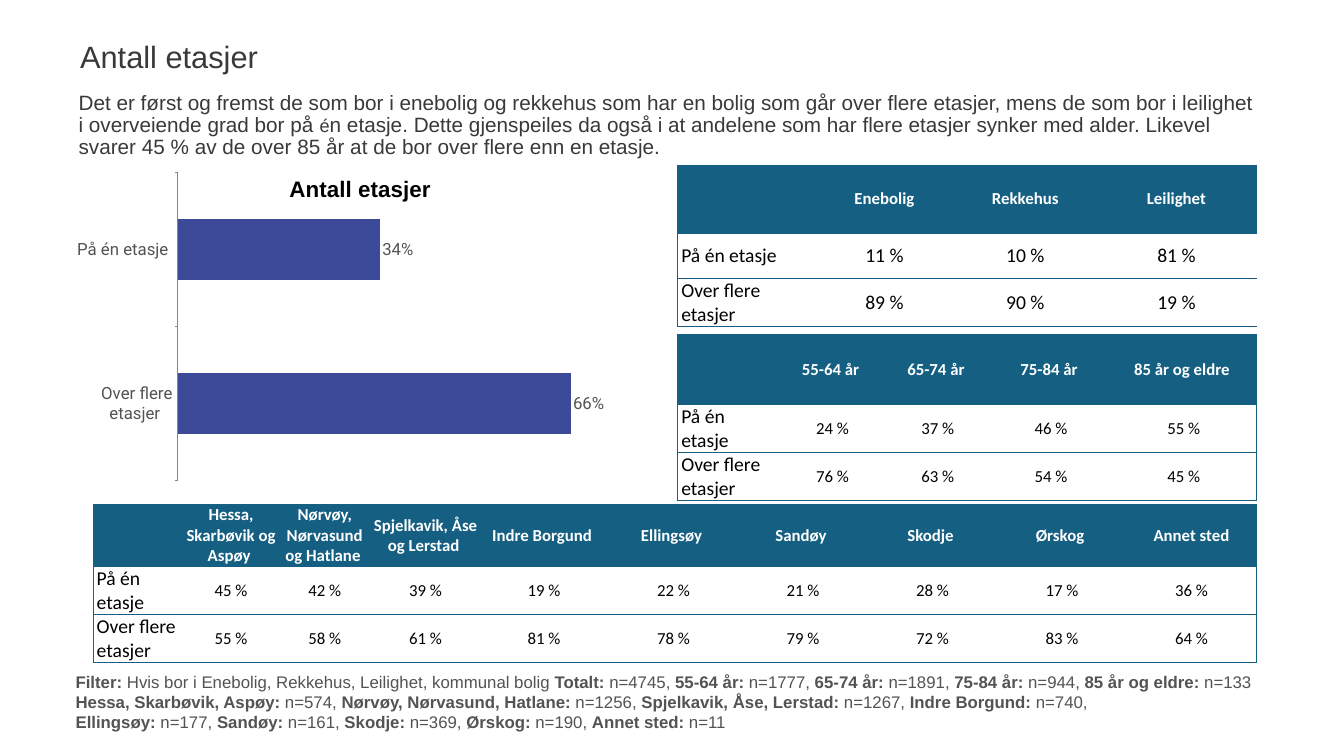
from lxml.etree import SubElement
from pptx import Presentation
from pptx.chart.data import CategoryChartData
from pptx.dml.color import RGBColor
from pptx.enum.chart import XL_CHART_TYPE, XL_LABEL_POSITION, XL_TICK_LABEL_POSITION, XL_TICK_MARK
from pptx.enum.text import MSO_ANCHOR, PP_ALIGN
from pptx.oxml import parse_xml
from pptx.oxml.ns import nsdecls, qn
from pptx.util import Inches, Pt

COLORS = {"teal": "156082", "bar": "3D4A9A", "heading": "3B3838", "grey": "535353",
          "axis": "868686", "black": "000000", "white": "FFFFFF"}


def format_font(font, color, **values):
    for name, value in values.items():
        setattr(font, name, value)
    font.color.rgb = RGBColor.from_string(COLORS[color])


def set_borders(cell, visible_sides):
    properties = cell._tc.get_or_add_tcPr()
    for side in "LRTB":
        line = SubElement(properties, qn(f"a:ln{side}"), w=str(Pt(1)))
        if side in visible_sides:
            fill = SubElement(line, qn("a:solidFill"))
            SubElement(fill, qn("a:srgbClr"), val=COLORS["teal"])
        else:
            SubElement(line, qn("a:noFill"))


presentation = Presentation()
presentation.slide_width = Inches(26.67)
presentation.slide_height = Inches(15)
slide = presentation.slides.add_slide(presentation.slide_layouts[6])

chart_data = CategoryChartData(number_format="0%")
chart_data.categories = ["På én etasje ", "Over flere etasjer "]
chart_data.add_series("Antall etasjer", [0.34, 0.66])
chart = slide.shapes.add_chart(XL_CHART_TYPE.BAR_CLUSTERED, Inches(1.53), Inches(3.18),
                               Inches(11.23), Inches(7.38), chart_data).chart
format_font(chart.font, "black", size=Pt(10), name="Arial")
chart.has_legend = False
chart.has_title = True
chart.chart_title.include_in_layout = True
chart.chart_title.text_frame.text = "Antall etasjer"
format_font(chart.chart_title.text_frame.paragraphs[0].runs[0].font, "black",
            size=Pt(32), name="Arial", bold=True)

category_axis = chart.category_axis
category_axis.reverse_order = True
category_axis.major_tick_mark = XL_TICK_MARK.OUTSIDE
category_axis.tick_label_position = XL_TICK_LABEL_POSITION.LOW
category_axis.format.line.color.rgb = RGBColor.from_string(COLORS["axis"])
format_font(category_axis.tick_labels.font, "grey", size=Pt(24), name="Roboto")
value_axis = chart.value_axis
value_axis.visible = False
value_axis.has_major_gridlines = False
value_axis.minimum_scale = 0
value_axis.maximum_scale = 0.7

plot = chart.plots[0]
plot.gap_width = 150
plot.overlap = -20
plot.vary_by_categories = False
series = plot.series[0]
series.format.fill.solid()
series.format.fill.fore_color.rgb = RGBColor.from_string(COLORS["bar"])
labels = series.data_labels
labels.show_value = True
labels.number_format = "0%"
labels.number_format_is_linked = False
labels.position = XL_LABEL_POSITION.OUTSIDE_END
format_font(labels.font, "grey", size=Pt(24), name="Roboto")

plot_area = chart._chartSpace.chart.plotArea
for layout in plot_area.findall(qn("c:layout")):
    plot_area.remove(layout)
plot_area.insert(0, parse_xml(
    f'<c:layout {nsdecls("c")}><c:manualLayout><c:layoutTarget val="inner"/>'
    '<c:xMode val="edge"/><c:yMode val="edge"/><c:x val="0.177"/><c:y val="0.033"/>'
    '<c:w val="0.738"/><c:h val="0.828"/></c:manualLayout></c:layout>'))

tables = [
    {"left": 13.45, "top": 3.27, "columns": [2.71, 2.78, 2.81, 3.19], "rows": [1.35, 0.91, 0.91],
     "headers": ["Enebolig", "Rekkehus", "Leilighet"],
     "values": [[11, 10, 81], [89, 90, 19]],
     "size": 28, "margins": (0.07, 0), "right_border": ""},
    {"left": 13.45, "top": 6.64, "columns": [2.03, 2.08, 2.1, 2.39, 2.88], "rows": [1.39, 0.77, 0.93],
     "headers": ["55-64 år ", "65-74 år ", "75-84 år ", "85 år og eldre "],
     "values": [[24, 37, 46, 55], [76, 63, 54, 45]],
     "size": 24, "margins": (0.01, 0.01), "right_border": "R"},
    {"left": 1.85, "top": 10.01, "columns": [1.81, 1.85, 1.87, 2.13] + [2.57] * 6,
     "rows": [1.17, 0.9, 0.9],
     "headers": ["Hessa, Skarbøvik og Aspøy ", "Nørvøy, Nørvasund og Hatlane ",
                 "Spjelkavik, Åse og Lerstad ", "Indre Borgund ", "Ellingsøy ", "Sandøy ",
                 "Skodje ", "Ørskog ", "Annet sted"],
     "values": [[45, 42, 39, 19, 22, 21, 28, 17, 36], [55, 58, 61, 81, 78, 79, 72, 83, 64]],
     "size": 24, "margins": (0.01, 0.01), "right_border": "R"},
]
row_labels = ["På én etasje", "Over flere etasjer"]

for data in tables:
    columns, rows = data["columns"], data["rows"]
    table = slide.shapes.add_table(len(rows), len(columns), Inches(data["left"]), Inches(data["top"]),
                                   Inches(sum(columns)), Inches(sum(rows))).table
    table.first_row = False
    table.horz_banding = False
    for column, width in zip(table.columns, columns):
        column.width = Inches(width)
    for row, height in zip(table.rows, rows):
        row.height = Inches(height)
    texts = [[""] + data["headers"]]
    for label, values in zip(row_labels, data["values"]):
        texts.append([label] + [f"{value} %" for value in values])
    for row_index, row_texts in enumerate(texts):
        for column_index, text in enumerate(row_texts):
            cell = table.cell(row_index, column_index)
            is_header, is_label = row_index == 0, column_index == 0
            sides = "TB" + ("L" if is_label else "")
            if column_index == len(columns) - 1:
                sides += data["right_border"]
            set_borders(cell, sides)
            if is_header or is_label:
                cell.fill.solid()
                cell.fill.fore_color.rgb = RGBColor.from_string(COLORS["teal" if is_header else "white"])
            else:
                cell.fill.background()
            side_margin, top_margin = (0.07, 0) if is_label else data["margins"]
            cell.margin_left = cell.margin_right = Inches(side_margin)
            cell.margin_top = Inches(top_margin)
            cell.margin_bottom = 0
            cell.vertical_anchor = MSO_ANCHOR.MIDDLE
            if text:
                paragraph = cell.text_frame.paragraphs[0]
                paragraph.alignment = PP_ALIGN.LEFT if is_label else PP_ALIGN.CENTER
                run = paragraph.add_run()
                run.text = text
                size = 24 if is_header else 28 if is_label else data["size"]
                format_font(run.font, "white" if is_header else "black",
                            size=Pt(size), name="Calibri", bold=is_header)

text_boxes = [
    {"place": (1.53, 0.47, 23.66, 1.29), "color": "heading", "anchor": MSO_ANCHOR.MIDDLE, "spacing": 1.0,
     "paragraphs": [[("Antall etasjer", 44, False)]]},
    {"place": (1.5, 1.72, 23.66, 1.55), "color": "heading", "anchor": MSO_ANCHOR.MIDDLE, "spacing": 0.9,
     "paragraphs": [[
         ("Det er først og fremst de som bor i enebolig og rekkehus som har en bolig som går over "
          "flere etasjer, mens de som bor i leilighet i overveiende grad bor på ", 29.6, False),
         ("é", 25.9, False),
         ("n etasje. Dette gjenspeiles da også i at andelene som har flere etasjer synker med alder. "
          "Likevel svarer 45 % av de over 85 år at de bor over flere enn en etasje.", 29.6, False)]]},
]
filter_lines = [
    ["Filter: ", "Hvis bor i Enebolig, Rekkehus, Leilighet, kommunal bolig ", "Totalt: ", "n=4745, ",
     "55-64 år:", " n=1777, ", "65-74 år:", " n=1891, ", "75-84 år:", " n=944, ",
     "85 år og eldre:", " n=133"],
    ["Hessa, Skarbøvik, Aspøy:", " n=574, ", "Nørvøy, Nørvasund, Hatlane:", " n=1256, ",
     "Spjelkavik, Åse, Lerstad:", " n=1267, ", "Indre Borgund:", " n=740,"],
    ["Ellingsøy:", " n=177, ", "Sandøy:", " n=161, ", "Skodje:", " n=369, ", "Ørskog:", " n=190, ",
     "Annet sted:", " n=11"],
]
text_boxes.append({
    "place": (1.44, 13.65, 23.66, 0.93), "color": "grey", "anchor": MSO_ANCHOR.BOTTOM, "spacing": 1.0,
    "paragraphs": [[(text, 24, index % 2 == 0) for index, text in enumerate(line)]
                   for line in filter_lines]})

for box in text_boxes:
    text_frame = slide.shapes.add_textbox(*[Inches(length) for length in box["place"]]).text_frame
    frame_format = {"word_wrap": True, "vertical_anchor": box["anchor"]}
    for side in ("left", "right", "top", "bottom"):
        frame_format[f"margin_{side}"] = Inches(0.06)
    for name, value in frame_format.items():
        setattr(text_frame, name, value)
    for index, runs in enumerate(box["paragraphs"]):
        paragraph = text_frame.add_paragraph() if index else text_frame.paragraphs[0]
        paragraph.line_spacing = box["spacing"]
        for text, size, bold in runs:
            run = paragraph.add_run()
            run.text = text
            format_font(run.font, box["color"], size=Pt(size), name="Arial", bold=bold)

presentation.save("out.pptx")
